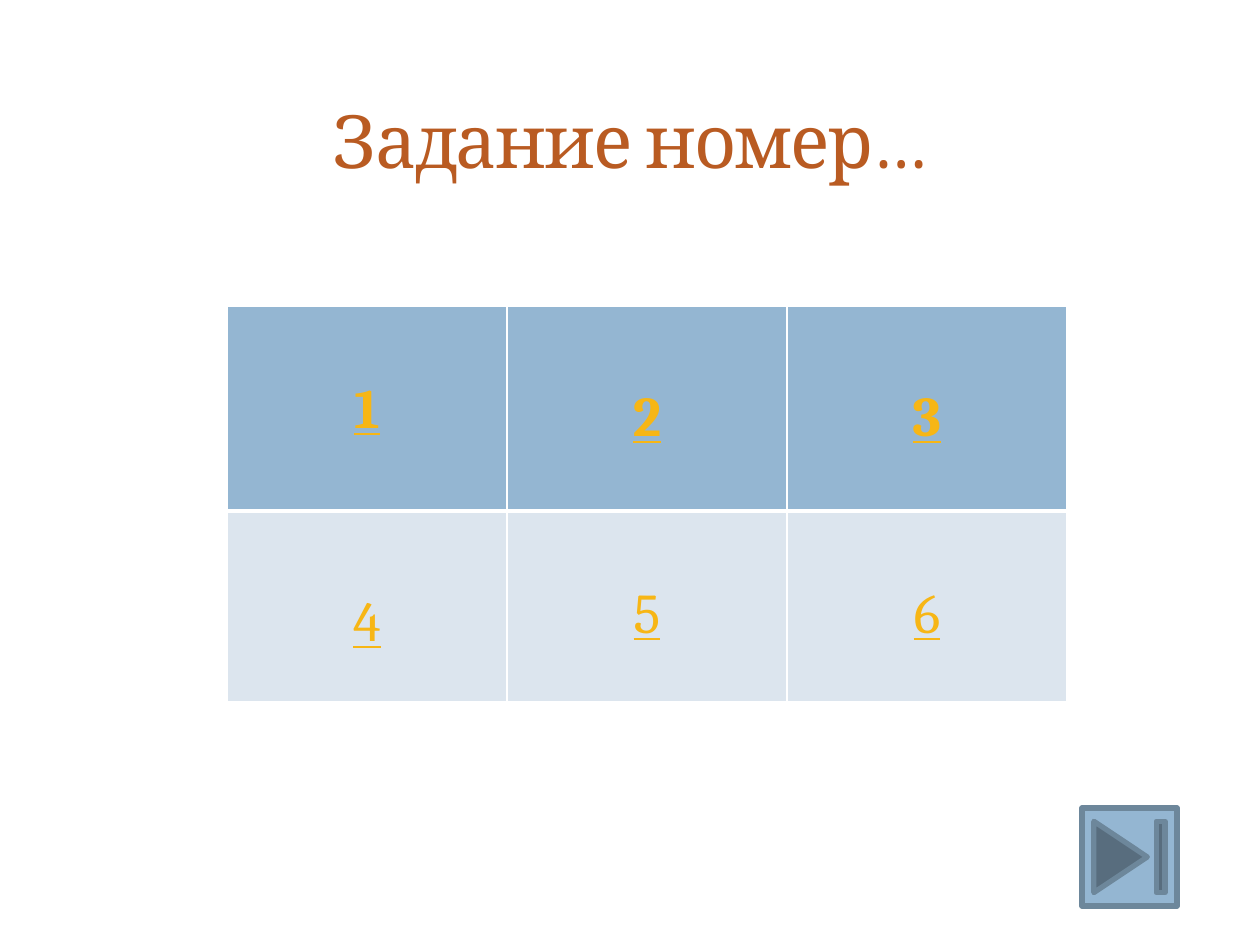
from lxml.etree import SubElement
from pptx import Presentation
from pptx.dml.color import RGBColor
from pptx.enum.shapes import MSO_SHAPE as Shape
from pptx.enum.text import MSO_ANCHOR as Anchor, PP_ALIGN as Align
from pptx.oxml.ns import qn
from pptx.util import Pt

SCALE = 914400 / 126
COLORS = {
    "title": "B95B22",
    "number": "F7B615",
    "header": "94B6D2",
    "body": "DCE5EE",
    "border": "FFFFFF",
    "button_line": "6D879B",
}
TITLE_FONT = {"name": "Cambria", "size": Pt(42)}
NUMBER_FONT = {"name": "Cambria", "size": Pt(32), "underline": True}
ROW_HEIGHTS = (205, 191)
NUMBERS = (
    (("1", 72), ("2", 80), ("3", 80)),
    (("4", 80), ("5", 72), ("6", 72)),
)


def px(length):
    """Turn pixels into EMU."""
    return round(length * SCALE)


def color(name):
    """Look up a named colour."""
    return RGBColor.from_string(COLORS[name])


def write(frame, text, font, color_name):
    """Write one centred line with the given format and return its run."""
    para = frame.paragraphs[0]
    para.alignment = Align.CENTER
    span = para.add_run()
    span.text = text
    for key, value in font.items():
        setattr(span.font, key, value)
    span.font.color.rgb = color(color_name)
    return span


def add_border(cell, side, width):
    """Draw one side of a cell's border."""
    properties = cell._tc.get_or_add_tcPr()
    line = SubElement(properties, qn(f"a:ln{side}"), w=str(Pt(width)))
    fill = SubElement(line, qn("a:solidFill"))
    SubElement(fill, qn("a:srgbClr"), val=COLORS["border"])


def add_title(page, box):
    """Place the slide title at the bottom of its box."""
    frame = page.shapes.add_textbox(*map(px, box)).text_frame
    frame.word_wrap = True
    frame.vertical_anchor = Anchor.BOTTOM
    span = write(frame, "Задание номер…", TITLE_FONT, "title")
    span.font._element.set("spc", "-100")


def add_task_table(page, box):
    """Place the table of task numbers."""
    table = page.shapes.add_table(len(NUMBERS), len(NUMBERS[0]), *map(px, box)).table
    for column in table.columns:
        column.width = px(box[2] / len(NUMBERS[0]))
    for row_index, numbers in enumerate(NUMBERS):
        table.rows[row_index].height = px(ROW_HEIGHTS[row_index])
        is_header = row_index == 0
        for column_index, (number, top) in enumerate(numbers):
            cell = table.cell(row_index, column_index)
            cell.margin_top = px(top)
            widths = {"L": 1, "R": 1, "T": 1 if is_header else 3, "B": 3 if is_header else 1}
            for side, width in widths.items():
                add_border(cell, side, width)
            cell.fill.solid()
            cell.fill.fore_color.rgb = color("header" if is_header else "body")
            write(cell.text_frame, number, NUMBER_FONT | {"bold": is_header}, "number")


def add_end_button(page, box):
    """Place the button that leads to the end."""
    button = page.shapes.add_shape(Shape.ACTION_BUTTON_END, *map(px, box))
    button.shadow.inherit = False
    button.fill.solid()
    button.fill.fore_color.rgb = color("header")
    button.line.color.rgb = color("button_line")
    button.line.width = Pt(3)


def main():
    """Build the slide and save the deck."""
    deck = Presentation()
    deck.slide_width, deck.slide_height = px(1260), px(945)
    page = deck.slides.add_slide(deck.slide_layouts[6])
    add_title(page, (63, 21, 1134, 168))
    add_task_table(page, (227, 306, 840, sum(ROW_HEIGHTS)))
    add_end_button(page, (1082, 808, 95, 98))
    deck.save("out.pptx")


if __name__ == "__main__":
    main()
